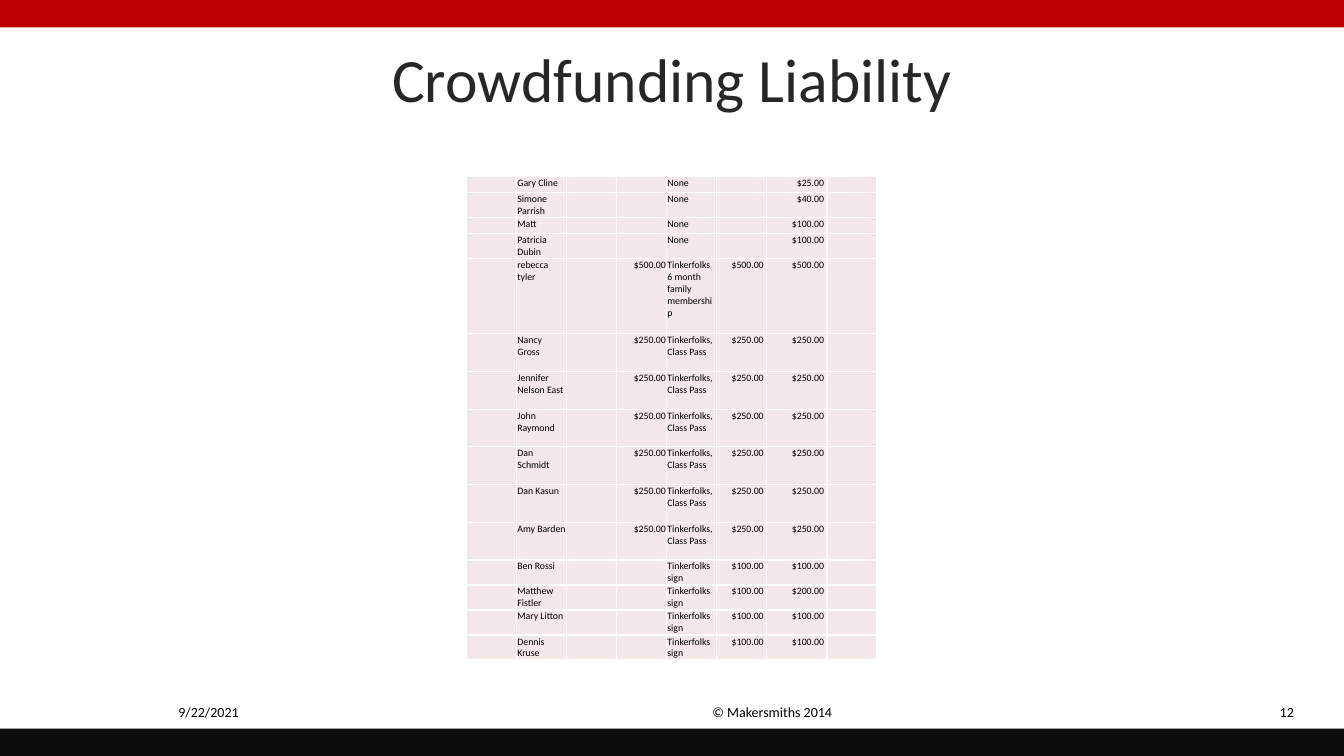
from dataclasses import dataclass

from lxml import etree
from pptx import Presentation
from pptx.dml.color import RGBColor
from pptx.enum.shapes import MSO_SHAPE
from pptx.enum.text import MSO_ANCHOR, PP_ALIGN
from pptx.oxml.ns import qn
from pptx.util import Cm, Pt

RECT = MSO_SHAPE.RECTANGLE
MIDDLE = MSO_ANCHOR.MIDDLE
LEFT, CENTER, RIGHT = PP_ALIGN.LEFT, PP_ALIGN.CENTER, PP_ALIGN.RIGHT


@dataclass(frozen=True)
class Theme:
    font: str = "Calibri"
    red: str = "C00000"
    black: str = "0D0D0D"
    ink: str = "000000"
    head: str = "272728"
    cell: str = "F4E7E7"
    rule: str = "FFFFFF"
    title: int = 44
    foot: int = 10
    body: int = 7


WIDE, HIGH, BAR = 33.87, 19.05, 0.69

# Column widths and row heights in cm
COLS = [1.26] * 6 + [1.52, 1.26]
LINE, PAIR, PASS, FAMILY = 0.4, 0.63, 0.95, 1.9
ALIGNS = [LEFT, LEFT, LEFT, RIGHT, LEFT, RIGHT, RIGHT, LEFT]

# Row height, backer, fee, reward, value, pledge
CLASS = "Tinkerfolks, Class Pass"
SIGN = "Tinkerfolks sign"
BACKERS = [
    (LINE, "Gary Cline", "", "None", "", "$25.00 "),
    (PAIR, "Simone Parrish", "", "None", "", "$40.00 "),
    (LINE, "Matt", "", "None", "", "$100.00 "),
    (PAIR, "Patricia Dubin", "", "None", "", "$100.00 "),
    (FAMILY, "rebecca tyler", "$500.00",
     "Tinkerfolks 6 month family membership", "$500.00 ", "$500.00 "),
    *[(PASS, name, "$250.00", CLASS, "$250.00 ", "$250.00 ")
      for name in ("Nancy Gross", "Jennifer Nelson East", "John Raymond",
                   "Dan Schmidt", "Dan Kasun", "Amy Barden")],
    *[(PAIR, name, "", SIGN, "$100.00 ", pledge)
      for name, pledge in (("Ben Rossi", "$100.00 "),
                           ("Matthew Fistler", "$200.00 "),
                           ("Mary Litton", "$100.00 "),
                           ("Dennis Kruse", "$100.00 "))],
]


class Deck:
    def __init__(self, theme):
        self.theme = theme
        self.show = Presentation()
        self.show.slide_width, self.show.slide_height = Cm(WIDE), Cm(HIGH)
        self.slide = self.show.slides.add_slide(self.show.slide_layouts[6])

    def style(self, par, size, color, align):
        par.alignment = align
        par.font.name = self.theme.font
        par.font.size = Pt(size)
        par.font.color.rgb = RGBColor.from_string(color)

    def bar(self, top, color):
        shape = self.slide.shapes.add_shape(
            RECT, 0, Cm(top), Cm(WIDE), Cm(BAR))
        shape.shadow.inherit = False
        shape.fill.solid()
        shape.fill.fore_color.rgb = RGBColor.from_string(color)
        shape.line.fill.background()

    def text(self, words, place, size, color, align=CENTER):
        box = self.slide.shapes.add_textbox(*map(Cm, place))
        frame = box.text_frame
        frame.word_wrap = True
        frame.vertical_anchor = MIDDLE
        frame.text = words
        self.style(frame.paragraphs[0], size, color, align)

    def border(self, cell):
        props = cell._tc.get_or_add_tcPr()
        for side in ("lnL", "lnR", "lnT", "lnB"):
            line = etree.SubElement(props, qn(f"a:{side}"), w=str(Pt(1)))
            fill = etree.SubElement(line, qn("a:solidFill"))
            etree.SubElement(fill, qn("a:srgbClr"), val=self.theme.rule)

    def cell(self, cell, words, align):
        cell.margin_left = cell.margin_right = cell.margin_top = Cm(0.02)
        cell.margin_bottom = 0
        self.border(cell)
        cell.fill.solid()
        cell.fill.fore_color.rgb = RGBColor.from_string(self.theme.cell)
        par = cell.text_frame.paragraphs[0]
        if words:
            par.text = words
        else:
            # Small type keeps an empty cell from stretching its row
            etree.SubElement(par._p, qn("a:endParaRPr"),
                             sz=str(self.theme.body * 100))
        self.style(par, self.theme.body, self.theme.ink, align)

    def table(self, left, top, rows):
        high = sum(row[0] for row in rows)
        frame = self.slide.shapes.add_table(
            len(rows), len(COLS), Cm(left), Cm(top), Cm(sum(COLS)), Cm(high))
        grid = frame.table
        grid.first_row = grid.horz_banding = False
        for col, width in zip(grid.columns, COLS):
            col.width = Cm(width)
        for line, (height, name, fee, *rest) in zip(grid.rows, rows):
            line.height = Cm(height)
            texts = ["", name, "", fee, *rest, ""]
            for cell, words, align in zip(line.cells, texts, ALIGNS):
                self.cell(cell, words, align)


def main():
    theme = Theme()
    deck = Deck(theme)
    deck.bar(0, theme.red)
    deck.bar(HIGH - BAR, theme.black)
    deck.text("Crowdfunding Liability", (1.7, 0.76, 30.48, 2.41),
              theme.title, theme.head)
    deck.table(11.76, 4.45, BACKERS)
    for words, left, width, align in (
            ("9/22/2021", 3.58, 3.35, CENTER),
            ("© Makersmiths 2014", 7.32, 24.28, CENTER),
            ("12", 32, 1.45, LEFT)):
        deck.text(words, (left, 17.55, width, 0.76),
                  theme.foot, theme.ink, align)
    deck.show.save("out.pptx")


if __name__ == "__main__":
    main()
